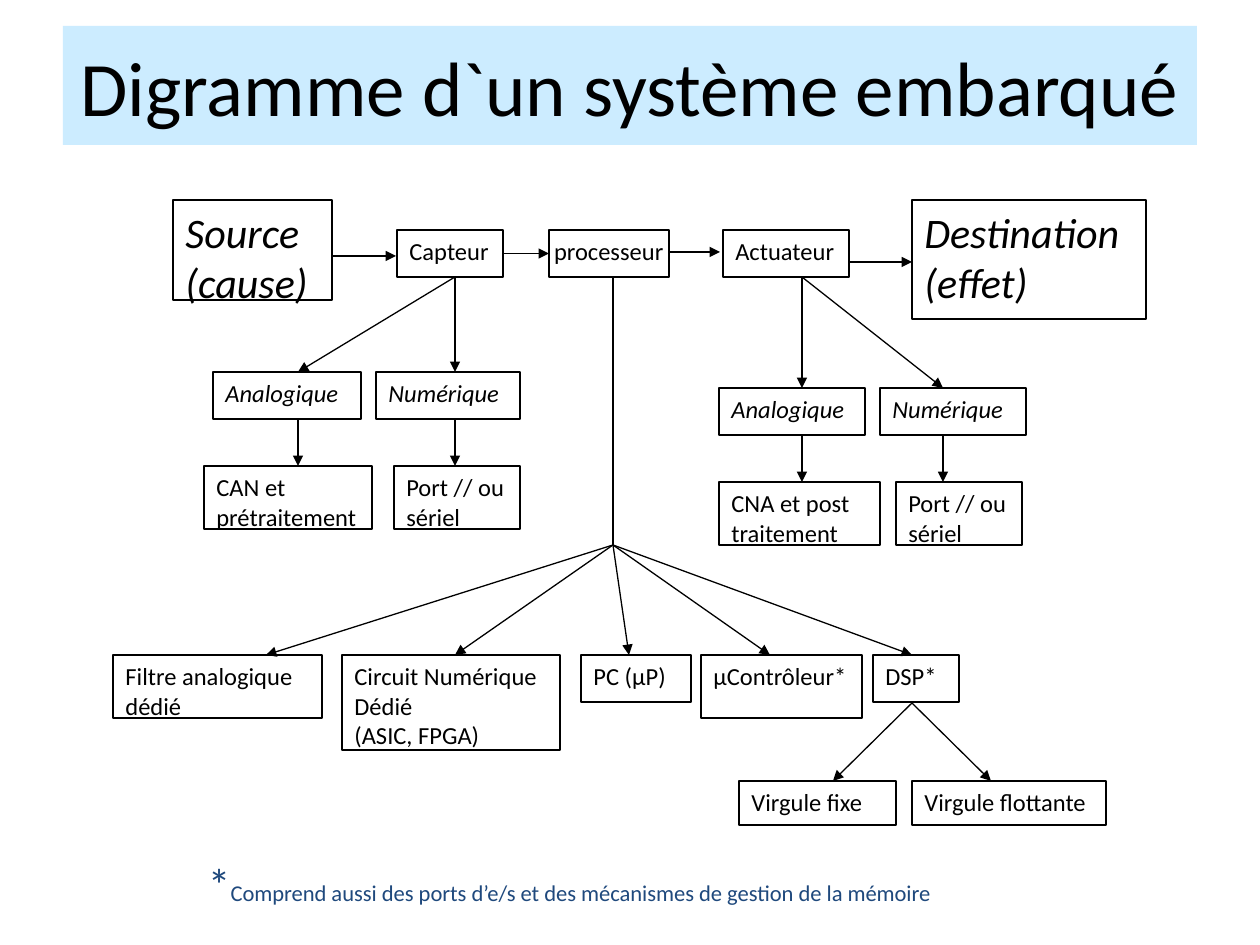
"""Build a one-slide block diagram of an embedded system."""
from lxml import etree
from pptx import Presentation
from pptx.dml.color import RGBColor
from pptx.enum.shapes import MSO_CONNECTOR, MSO_SHAPE
from pptx.enum.text import MSO_ANCHOR, PP_ALIGN
from pptx.oxml.ns import qn
from pptx.util import Pt

RECTANGLE = MSO_SHAPE.RECTANGLE
STRAIGHT = MSO_CONNECTOR.STRAIGHT
TOP, MIDDLE = MSO_ANCHOR.TOP, MSO_ANCHOR.MIDDLE
LEFT, CENTER = PP_ALIGN.LEFT, PP_ALIGN.CENTER
PX = 914400 // 126
BLACK, WHITE, PALE_BLUE, NAVY = "000000", "FFFFFF", "CCECFF", "1F497D"


def color(value):
    return RGBColor.from_string(value)


def add_box(bounds, paragraphs, fill=WHITE, line=BLACK, ink=BLACK, italic=False,
            anchor=TOP, align=LEFT):
    box = page.shapes.add_shape(RECTANGLE, *[n * PX for n in bounds])
    box.shadow.inherit = False
    box.fill.solid()
    box.fill.fore_color.rgb = color(fill)
    if line:
        box.line.color.rgb = color(line)
        box.line.width = Pt(0.75)
    else:
        box.line.fill.background()
    frame = box.text_frame
    frame.word_wrap = True
    frame.vertical_anchor = anchor
    for index, runs in enumerate(paragraphs):
        para = frame.add_paragraph() if index else frame.paragraphs[0]
        para.alignment = align
        for text, size in runs:
            span = para.add_run()
            span.text = text
            span.font.name = "Calibri"
            span.font.size = Pt(size)
            span.font.italic = italic
            span.font.color.rgb = color(ink)
    return box


deck = Presentation()
deck.slide_width, deck.slide_height = 1260 * PX, 945 * PX
page = deck.slides.add_slide(deck.slide_layouts[6])

add_box((63, 26, 1134, 119), [[("Digramme d`un système embarqué", 44)]],
        fill=PALE_BLUE, line=None, anchor=MIDDLE, align=CENTER)
footnote = add_box(
    (203, 845, 863, 65),
    [[("*", 25.9),
      ("Comprend aussi des ports d’e/s et des mécanismes de gestion de la mémoire", 12.9)]],
    line=None, ink=NAVY)
footnote.text_frame.margin_left = footnote.text_frame.margin_right = 5 * PX
footnote.text_frame.margin_top = 11 * PX

for bounds, text in [((173, 200, 159, 100), "Source (cause)"),
                     ((912, 200, 234, 119), "Destination (effet)")]:
    add_box(bounds, [[(text, 24)]], italic=True)

for left, top, width, text in [(213, 372, 148, "Analogique"), (376, 372, 144, "Numérique"),
                               (719, 388, 146, "Analogique"), (880, 388, 146, "Numérique")]:
    add_box((left, top, width, 47), [[(text, 14)]], italic=True)

boxes = {}
for left, top, width, height, *lines in [
    (397, 230, 106, 47, "Capteur"),
    (549, 230, 120, 47, "processeur"),
    (723, 230, 126, 47, "Actuateur"),
    (204, 466, 168, 63, "CAN et prétraitement"),
    (394, 466, 126, 63, "Port // ou sériel"),
    (719, 482, 161, 63, "CNA et post traitement"),
    (896, 482, 126, 63, "Port // ou sériel"),
    (113, 655, 209, 63, "Filtre analogique dédié"),
    (342, 655, 218, 95, "Circuit Numérique Dédié", "(ASIC, FPGA)"),
    (581, 655, 110, 47, "PC (μP)"),
    (701, 655, 161, 63, "μContrôleur*"),
    (873, 655, 86, 47, "DSP*"),
    (739, 781, 157, 44, "Virgule fixe"),
    (912, 781, 194, 44, "Virgule flottante"),
]:
    boxes[lines[0]] = add_box((left, top, width, height), [[(text, 14)] for text in lines])
processor_frame = boxes["processeur"].text_frame
processor_frame.margin_left = processor_frame.margin_right = 5 * PX

arrows = [
    (332, 256, 396, 256), (503, 254, 549, 254), (669, 252, 720, 252), (849, 262, 912, 262),
    (455, 277, 298, 372), (455, 277, 455, 372), (298, 419, 298, 466), (455, 419, 455, 466),
    (802, 277, 802, 388), (802, 277, 943, 388), (802, 435, 802, 482), (943, 435, 943, 482),
    (912, 703, 833, 781), (912, 703, 991, 781),
]
arrows += [(613, 545, tip, 655) for tip in (266, 455, 629, 770, 912)]
trunk = (613, 545, 613, 277)
for ends in arrows + [trunk]:
    connector = page.shapes.add_connector(STRAIGHT, *[n * PX for n in ends])
    connector.line.color.rgb = color(BLACK)
    connector.line.width = Pt(0.75)
    etree.SubElement(connector.element.spPr, qn("a:effectLst"))
    if ends != trunk:
        etree.SubElement(connector.line._get_or_add_ln(), qn("a:tailEnd"), type="triangle")
    if ends == (503, 254, 549, 254):
        connector.begin_connect(boxes["Capteur"], 3)
        connector.end_connect(boxes["processeur"], 1)

deck.save("out.pptx")
